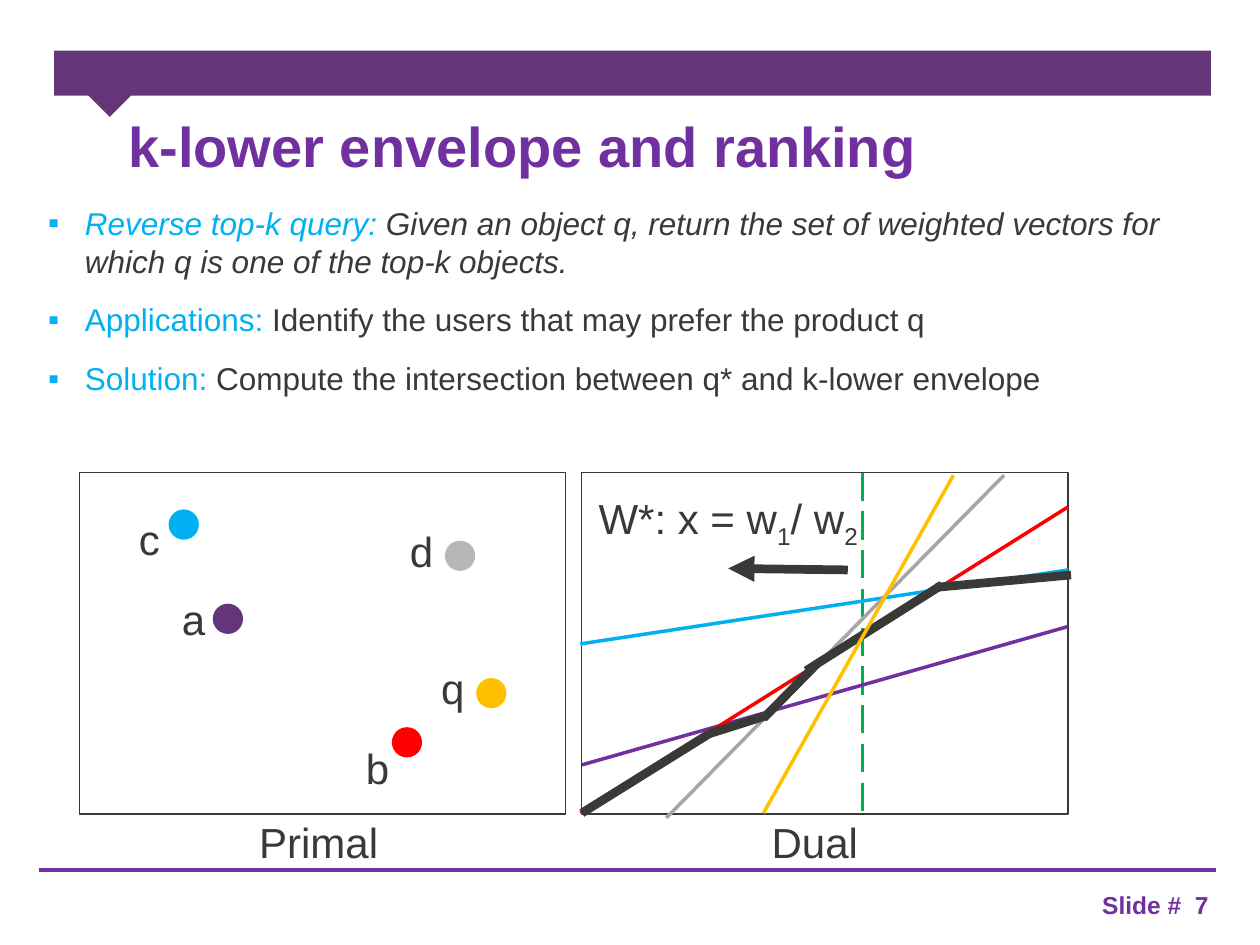
from pptx import Presentation
from pptx.dml.color import RGBColor
from pptx.enum.dml import MSO_LINE
from pptx.enum.shapes import MSO_CONNECTOR, MSO_SHAPE
from pptx.enum.text import MSO_ANCHOR, MSO_AUTO_SIZE, PP_ALIGN
from pptx.oxml.ns import qn
from pptx.util import Cm, Pt
from lxml import etree

RECT, OVAL = MSO_SHAPE.RECTANGLE, MSO_SHAPE.OVAL
STRAIGHT, DASH = MSO_CONNECTOR.STRAIGHT, MSO_LINE.LONG_DASH
TOP, MIDDLE = MSO_ANCHOR.TOP, MSO_ANCHOR.MIDDLE
LEFT, CENTER = PP_ALIGN.LEFT, PP_ALIGN.CENTER
FIXED = MSO_AUTO_SIZE.NONE

INK, PLUM, VIOLET = "393938", "653579", "7030A0"
SKY, RED, GOLD = "00B0F0", "FF0000", "FFC000"
SILVER, GREY, GREEN = "B6B7B8", "A6A6A6", "00B050"
WIDE, HIGH = 9.8, 6.88  # panel size in cm


def rgb(code):
    return RGBColor.from_string(code)


def style(item, **values):
    for name, value in values.items():
        setattr(item, name, value)


def place(shape, x, y, w, h):
    style(shape, left=Cm(x), top=Cm(y), width=Cm(w), height=Cm(h))


def add_run(para, text, color, size, base=0, **look):
    run = para.add_run()
    run.text = text
    style(run.font, name="Arial", size=Pt(size), **look)
    run.font.color.rgb = rgb(color)
    if base:
        run._r.get_or_add_rPr().set("baseline", str(base * 1000))


def add_text(slide, box, runs, color=INK, size=24, align=CENTER, anchor=TOP, **look):
    frame = slide.shapes.add_textbox(*map(Cm, box)).text_frame
    style(frame, word_wrap=True, vertical_anchor=anchor)
    para = frame.paragraphs[0]
    para.alignment = align
    for text, base in runs:
        add_run(para, text, color, size, base, **look)


def add_form(slide, kind, box, fill=None, edge=None):
    form = slide.shapes.add_shape(kind, *map(Cm, box))
    form.shadow.inherit = False
    if fill:
        form.fill.solid()
        form.fill.fore_color.rgb = rgb(fill)
    else:
        form.fill.background()
    if edge:
        form.line.color.rgb = rgb(edge)
        form.line.width = Pt(0.75)
    else:
        form.line.fill.background()
    return form


def add_line(slide, ends, color, width=2, dash=None, arrow=False):
    line = slide.shapes.add_connector(STRAIGHT, *map(Cm, ends))
    etree.SubElement(line._element.spPr, qn("a:effectLst"))
    line.line.color.rgb = rgb(color)
    line.line.width = Pt(width)
    if dash:
        line.line.dash_style = dash
    if arrow:
        etree.SubElement(line.line._get_or_add_ln(), qn("a:headEnd"), type="triangle")


def add_frame(slide, x, y, name, shift):
    add_form(slide, RECT, (x, y, WIDE, HIGH), edge=INK)
    add_text(slide, (x + shift, y + 6.81, 5.13, 1.27), [(name, 0)])


def draw_trim(slide, x, y, w):
    # Banner with its pointer
    add_form(slide, RECT, (x, y, w, 0.91), PLUM)
    add_form(slide, RECT, (x + 0.71, y + 0.38, 0.81, 0.79), PLUM).rotation = 45
    # Footer rule and slide number
    add_line(slide, (x - 0.3, 17.53, x + w + 0.1, 17.53), VIOLET, 2.25)
    add_text(slide, (x + 20.88, 18.03, 3.33, 0.41), [("Slide #  7", 0)],
             VIOLET, 14, LEFT, MIDDLE, bold=True)


def fit_frame(holder, box):
    place(holder, *box)
    frame = holder.text_frame
    style(frame, margin_left=0, margin_top=0, margin_right=Cm(0.25),
          margin_bottom=Cm(0.13), word_wrap=True, auto_size=FIXED,
          vertical_anchor=TOP)
    return frame


def fill_title(slide, box):
    para = fit_frame(slide.shapes.title, box).paragraphs[0]
    para.alignment = LEFT
    add_run(para, "k-lower envelope and ranking", VIOLET, 32, bold=True)


def fill_list(slide, box):
    items = [
        ("Reverse top-k query:", " Given an object q, return the set of weighted "
         "vectors for which q is one of the top-k objects.", True),
        ("Applications:", " Identify the users that may prefer the product q", False),
        ("Solution: ", "Compute the intersection between q* and k-lower envelope", False),
    ]
    frame = fit_frame(slide.placeholders[1], box)
    for i, (lead, rest, slant) in enumerate(items):
        para = frame.add_paragraph() if i else frame.paragraphs[0]
        props = para._p.get_or_add_pPr()
        props.set("marL", str(Cm(0.74)))
        props.set("indent", str(-Cm(0.74)))
        etree.SubElement(props, qn("a:buFont"), typeface="Arial")
        etree.SubElement(props, qn("a:buChar"), char="▪")
        style(para, space_before=Pt(0), space_after=Pt(12), alignment=LEFT)
        add_run(para, lead, SKY, 18, italic=slant)
        add_run(para, rest, INK, 18, italic=slant)


def draw_primal(slide, x, y):
    add_frame(slide, x, y, "Primal", 2.26)
    # Name, colour, dot corner, label corner
    points = [
        ("a", PLUM, 2.69, 2.64, 1.6, 2.31),
        ("b", RED, 6.3, 5.13, 5.31, 5.31),
        ("c", SKY, 1.8, 0.74, 0.71, 0.69),
        ("d", SILVER, 7.37, 1.37, 6.2, 0.94),
        ("q", GOLD, 8, 4.14, 6.83, 3.71),
    ]
    for name, color, dx, dy, tx, ty in points:
        add_form(slide, OVAL, (x + dx, y + dy, 0.61, 0.61), color)
        add_text(slide, (x + tx, y + ty, 1.4, 1.27), [(name, 0)])


def draw_dual(slide, x, y):
    def draw(ends, *look, **more):
        x1, y1, x2, y2 = ends
        add_line(slide, (x + x1, y + y1, x + x2, y + y2), *look, **more)

    # Sweep line with its label and arrow
    draw((5.66, 0, 5.66, 6.91), GREEN, dash=DASH)
    add_text(slide, (x - 0.25, y + 0.28, 6.4, 1.27),
             [("W*: x = w", 0), ("1", -25), ("/ w", 0), ("2", -25)])
    draw((2.95, 1.93, 5.36, 1.96), INK, 5, arrow=True)
    add_frame(slide, x, y, "Dual", 2.13)
    # Dual lines of the points
    duals = [
        (VIOLET, (9.8, 3.1, 0, 5.89)),
        (RED, (9.8, 0.69, -0.03, 6.86)),
        (SKY, (9.8, 1.96, -0.03, 3.45)),
        (GREY, (8.51, 0.05, 1.7, 6.96)),
    ]
    for color, ends in duals:
        draw(ends, color)
    # Envelope
    edges = [
        (0, 6.86, 2.57, 5.26),
        (4.52, 3.99, 7.26, 2.26),
        (2.57, 5.26, 3.71, 4.9),
        (3.66, 4.95, 4.75, 3.84),
        (7.14, 2.31, 9.86, 2.06),
    ]
    for ends in edges:
        draw(ends, INK, 5)
    # Dual line of q, on top
    draw((7.49, 0.05, 3.66, 6.86), GOLD)


def main():
    deck = Presentation()
    style(deck, slide_width=Cm(25.4), slide_height=Cm(19.05))
    slide = deck.slides.add_slide(deck.slide_layouts[1])
    draw_trim(slide, 1.09, 1.02, 23.32)
    fill_title(slide, (2.59, 2.24, 22.81, 1.7))
    fill_list(slide, (0.97, 4.11, 24.43, 4.5))
    draw_primal(slide, 1.6, 9.53)
    draw_dual(slide, 11.73, 9.53)
    deck.save("out.pptx")


if __name__ == "__main__":
    main()
